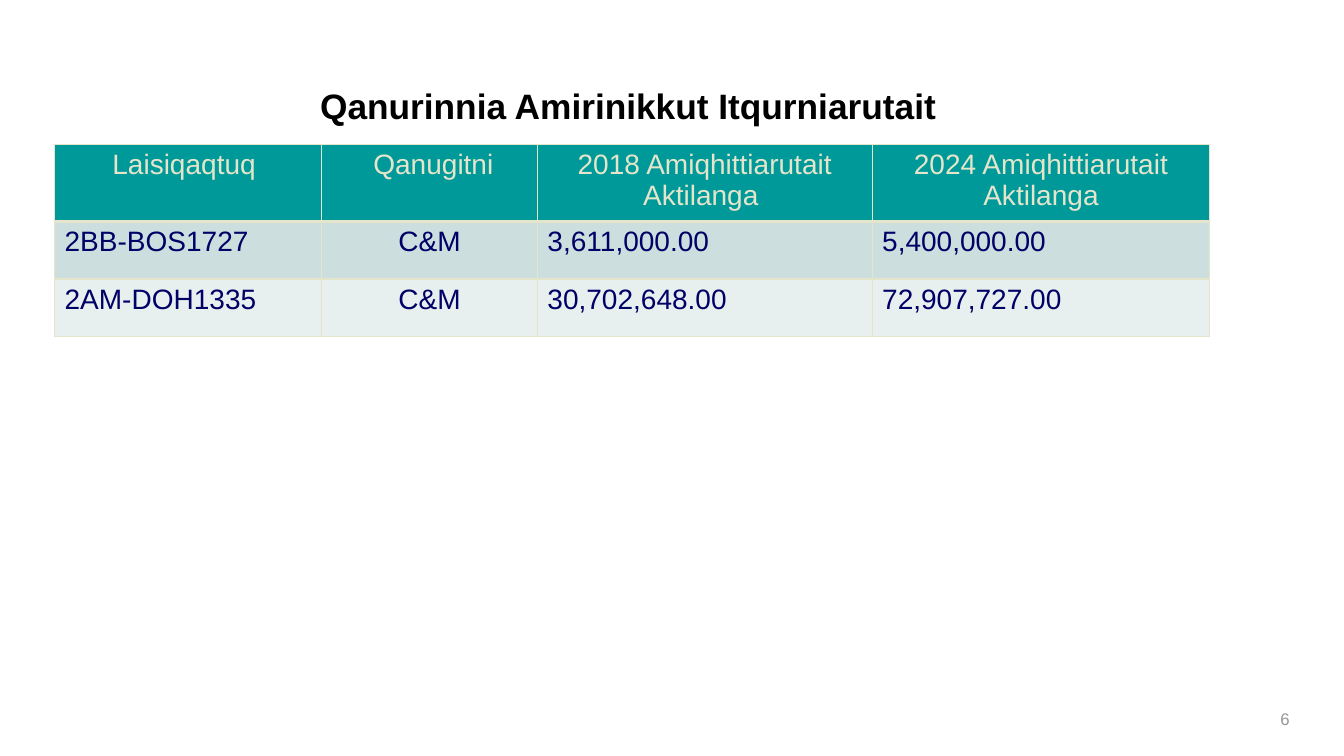
from dataclasses import dataclass

from lxml.etree import SubElement
from pptx import Presentation
from pptx.dml.color import RGBColor
from pptx.enum.text import MSO_ANCHOR, PP_ALIGN
from pptx.oxml.ns import qn
from pptx.util import Inches, Pt


@dataclass(frozen=True)
class Theme:
    font: str = "Arial"
    title_color: str = "000000"
    header_text: str = "E5E5CC"
    header_fill: str = "009999"
    body_text: str = "000066"
    band_fills: tuple = ("CCDEDE", "E7EFEF")
    border: str = "E5E5CC"
    number_color: str = "969696"
    title_size: float = 25.2
    table_size: float = 20
    number_size: float = 12
    border_width: float = 1
    header_rule_width: float = 3


THEME = Theme()
HEADERS = (
    "Laisiqaqtuq ",
    " Qanugitni",
    "2018 Amiqhittiarutait Aktilanga ",
    "2024 Amiqhittiarutait Aktilanga",
)
LICENCES = (
    ("2BB-BOS1727", "C&M", "3,611,000.00", "5,400,000.00"),
    ("2AM-DOH1335", "C&M", "30,702,648.00", "72,907,727.00"),
)
COLUMN_WIDTHS = (2.65, 2.14, 3.32, 3.35)
ROW_HEIGHTS = (0.69, 0.57, 0.57)
CENTRED_COLUMN = 1


def style_paragraph(paragraph, text, size, color, alignment, bold=False):
    paragraph.text = text
    paragraph.alignment = alignment
    paragraph.font.name = THEME.font
    paragraph.font.size = Pt(size)
    paragraph.font.bold = bold
    paragraph.font.color.rgb = RGBColor.from_string(color)


def add_text_frame(slide, left, top, width, height):
    box = slide.shapes.add_textbox(Inches(left), Inches(top), Inches(width), Inches(height))
    box.text_frame.word_wrap = True
    box.text_frame.vertical_anchor = MSO_ANCHOR.TOP
    return box.text_frame


def add_title(slide, left, top, width, height):
    frame = add_text_frame(slide, left, top, width, height)
    frame.margin_left = frame.margin_right = frame.margin_top = frame.margin_bottom = 0
    paragraph = frame.paragraphs[0]
    style_paragraph(paragraph, "Qanurinnia Amirinikkut Itqurniarutait ", THEME.title_size,
                    THEME.title_color, PP_ALIGN.CENTER, bold=True)
    paragraph.line_spacing = Pt(24)


def set_borders(cell, bottom_width):
    properties = cell._tc.get_or_add_tcPr()
    widths = (THEME.border_width,) * 3 + (bottom_width,)
    for index, (side, width) in enumerate(zip("LRTB", widths)):
        line = properties.makeelement(qn(f"a:ln{side}"), {"w": str(Pt(width))})
        fill = SubElement(line, qn("a:solidFill"))
        SubElement(fill, qn("a:srgbClr"), val=THEME.border)
        properties.insert(index, line)


def fill_cell(cell, text, text_color, fill_color, alignment, bottom_width):
    style_paragraph(cell.text_frame.paragraphs[0], text, THEME.table_size, text_color, alignment)
    cell.fill.solid()
    cell.fill.fore_color.rgb = RGBColor.from_string(fill_color)
    set_borders(cell, bottom_width)


def add_licence_table(slide, left, top):
    table = slide.shapes.add_table(
        len(ROW_HEIGHTS), len(COLUMN_WIDTHS), Inches(left), Inches(top),
        Inches(sum(COLUMN_WIDTHS)), Inches(sum(ROW_HEIGHTS))).table
    for column, width in zip(table.columns, COLUMN_WIDTHS):
        column.width = Inches(width)
    for row, height in zip(table.rows, ROW_HEIGHTS):
        row.height = Inches(height)
    for column, text in enumerate(HEADERS):
        fill_cell(table.cell(0, column), text, THEME.header_text, THEME.header_fill,
                  PP_ALIGN.CENTER, THEME.header_rule_width)
    for row, (licence, band) in enumerate(zip(LICENCES, THEME.band_fills), start=1):
        for column, text in enumerate(licence):
            alignment = PP_ALIGN.CENTER if column == CENTRED_COLUMN else PP_ALIGN.LEFT
            fill_cell(table.cell(row, column), text, THEME.body_text, band,
                      alignment, THEME.border_width)


def add_slide_number(slide, left, top, width, height):
    frame = add_text_frame(slide, left, top, width, height)
    paragraph = frame.paragraphs[0]
    style_paragraph(paragraph, "6", THEME.number_size, THEME.number_color, PP_ALIGN.RIGHT)
    paragraph.line_spacing = 0.9


def main():
    presentation = Presentation()
    presentation.slide_width = Inches(13.33)
    presentation.slide_height = Inches(7.5)
    slide = presentation.slides.add_slide(presentation.slide_layouts[6])
    add_title(slide, 0.56, 0.92, 11.44, 0.33)
    add_licence_table(slide, 0.54, 1.43)
    add_slide_number(slide, 11.78, 7, 1.11, 0.33)
    presentation.save("out.pptx")


if __name__ == "__main__":
    main()
